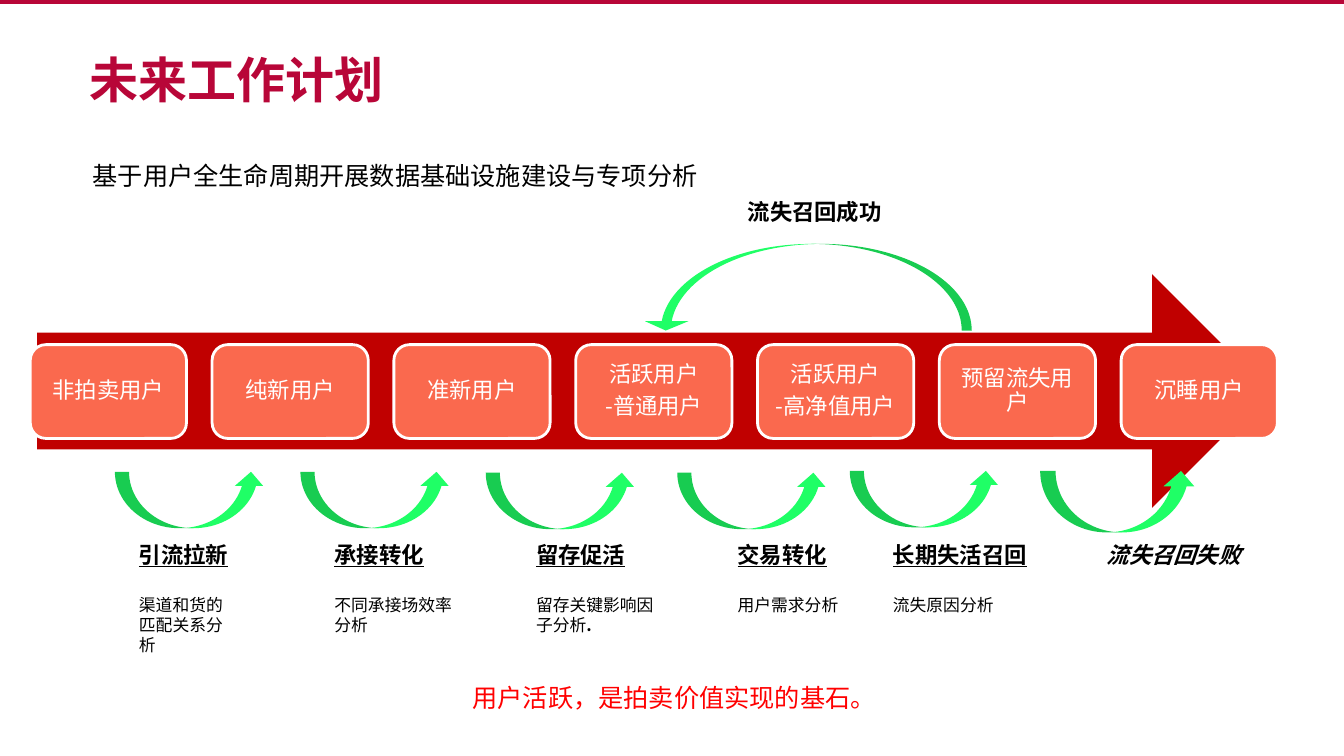
"""Build the user-lifecycle work plan slide."""
from dataclasses import dataclass
from typing import Any

from lxml.etree import SubElement
from pptx import Presentation
from pptx.dml.color import RGBColor
from pptx.enum.shapes import MSO_SHAPE as Shp
from pptx.enum.text import MSO_ANCHOR as Anchor, PP_ALIGN as Align
from pptx.oxml.ns import qn
from pptx.util import Pt

FONT = "Noto Sans CJK SC"
CRIMSON = RGBColor(0xB8, 0x06, 0x38)
DARK_RED = RGBColor(0xC0, 0x00, 0x00)
CORAL = RGBColor(0xFA, 0x69, 0x4E)
GREEN = RGBColor(0x1F, 0xFF, 0x66)
RED = RGBColor(0xFF, 0x00, 0x00)
BLACK = RGBColor(0x00, 0x00, 0x00)
WHITE = RGBColor(0xFF, 0xFF, 0xFF)

TITLE = {"size": Pt(35), "bold": True}
LEAD = {"size": Pt(18)}
STAGE = {"size": Pt(16)}
LABEL = {"size": Pt(16), "bold": True}
HEADING = LABEL | {"underline": True}
FAILURE = LABEL | {"italic": True}
DETAIL = {"size": Pt(12), "bold": False}
DETAIL_BOLD = {"size": Pt(12), "bold": True}

STAGE_LEFT, STAGE_PITCH = 21.6, 129.87


@dataclass
class Box:
    x: float
    y: float
    w: float
    h: float

    def emu(self) -> tuple[Pt, Pt, Pt, Pt]:
        return Pt(self.x), Pt(self.y), Pt(self.w), Pt(self.h)


@dataclass
class Run:
    text: str
    fmt: dict[str, Any]
    color: RGBColor = BLACK


@dataclass
class Action:
    box: Box
    heading: str
    details: list[Run]


@dataclass
class Loop:
    box: Box
    rotation: float = 0
    adjustments: tuple[float, ...] = ()


STAGES = [
    ["非拍卖用户"], ["纯新用户"], ["准新用户"], ["活跃用户", "-普通用户"],
    ["活跃用户", "-高净值用户"], ["预留流失用户"], ["沉睡用户"],
]

LOOPS = [Loop(Box(x, y, 107.3, 40.3)) for x, y in
         [(82.1, 337), (214.6, 337), (347, 337.7), (483.8, 337.7), (607, 336.4)]]
LOOPS += [
    Loop(Box(460.1, 174.2, 234, 61.9), 180, (0.115, 0.5, 0.108)),
    Loop(Box(743, 336.4, 111.6, 43.9)),
]

ACTIONS = [
    Action(Box(92.2, 383, 79.2, 90), "引流拉新", [Run("渠道和货的匹配关系分析", DETAIL)]),
    Action(Box(231.8, 383, 101.5, 75), "承接转化", [Run("不同承接场效率分析", DETAIL)]),
    Action(Box(375.8, 383, 101.5, 75), "留存促活",
           [Run("留存关键影响因子分析", DETAIL), Run(".", DETAIL_BOLD)]),
    Action(Box(519.8, 383, 101.5, 60.5), "交易转化", [Run("用户需求分析", DETAIL)]),
    Action(Box(630.7, 383, 162, 60.5), "长期失活召回", [Run("流失原因分析", DETAIL)]),
]

NOTES = [
    (Box(783.4, 383, 135.4, 26.6), Run("流失召回失败", FAILURE)),
    (Box(527, 138.2, 133.2, 26.6), Run("流失召回成功", LABEL)),
    (Box(59.1, 110.8, 549.3, 26), Run("基于用户全生命周期开展数据基础设施建设与专项分析", LEAD)),
    (Box(330.5, 483.8, 480.2, 28.8), Run("用户活跃，是拍卖价值实现的基石。", LEAD, RED)),
]


def write(tf, paragraphs: list[list[Run]], align=Align.LEFT, **spacing: Any) -> None:
    for i, runs in enumerate(paragraphs):
        p = tf.add_paragraph() if i else tf.paragraphs[0]
        p.alignment = align
        for name, value in spacing.items():
            setattr(p, name, value)
        for run in runs:
            r = p.add_run()
            r.text = run.text
            for name, value in ({"name": FONT} | run.fmt).items():
                setattr(r.font, name, value)
            r.font.color.rgb = run.color
            SubElement(r.font._element, qn("a:ea"), typeface=FONT)


def set_frame(tf, inset: float, anchor=Anchor.MIDDLE) -> None:
    values = {f"margin_{side}": Pt(inset) for side in ("left", "right", "top", "bottom")}
    for name, value in (values | {"word_wrap": True, "vertical_anchor": anchor}).items():
        setattr(tf, name, value)


def add_block(s, kind, box: Box, fill: RGBColor):
    sp = s.shapes.add_shape(kind, *box.emu())
    sp.shadow.inherit = False
    sp.fill.solid()
    sp.fill.fore_color.rgb = fill
    sp.line.fill.background()
    return sp


def add_text(s, box: Box, paragraphs: list[list[Run]], **spacing: Any) -> None:
    tf = s.shapes.add_textbox(*box.emu()).text_frame
    tf.word_wrap = True
    write(tf, paragraphs, **spacing)


def add_title(s, box: Box, run: Run) -> None:
    sp = s.shapes.title
    sp.left, sp.top, sp.width, sp.height = box.emu()
    set_frame(sp.text_frame, 2.2)
    write(sp.text_frame, [[run]])


def add_stage(s, index: int, lines: list[str]) -> None:
    box = Box(STAGE_LEFT + index * STAGE_PITCH, 246.2, 111.6, 67)
    sp = add_block(s, Shp.ROUNDED_RECTANGLE, box, CORAL)
    sp.line.color.rgb = WHITE
    sp.line.width = Pt(2)
    set_frame(sp.text_frame, 5)
    write(sp.text_frame, [[Run(line, STAGE, WHITE)] for line in lines],
          Align.CENTER, line_spacing=0.9, space_after=Pt(5.6))


def add_loop(s, loop: Loop) -> None:
    sp = add_block(s, Shp.CURVED_UP_ARROW, loop.box, GREEN)
    sp.rotation = loop.rotation
    for i, value in enumerate(loop.adjustments):
        sp.adjustments[i] = value


def add_action(s, action: Action) -> None:
    add_text(s, action.box, [[Run(action.heading, HEADING)], action.details],
             space_after=Pt(19.2))


def main() -> None:
    prs = Presentation()
    prs.slide_width, prs.slide_height = Pt(960), Pt(540)
    s = prs.slides.add_slide(prs.slide_layouts[5])
    add_block(s, Shp.RECTANGLE, Box(0, -2.2, 960, 5), CRIMSON)
    add_title(s, Box(61.9, 33.1, 216, 46.8), Run("未来工作计划", TITLE, CRIMSON))
    add_block(s, Shp.RIGHT_ARROW, Box(26.6, 195.8, 879.8, 167), DARK_RED)
    for i, lines in enumerate(STAGES):
        add_stage(s, i, lines)
    for loop in LOOPS:
        add_loop(s, loop)
    for action in ACTIONS:
        add_action(s, action)
    for box, run in NOTES:
        add_text(s, box, [[run]])
    prs.save("out.pptx")


if __name__ == "__main__":
    main()
